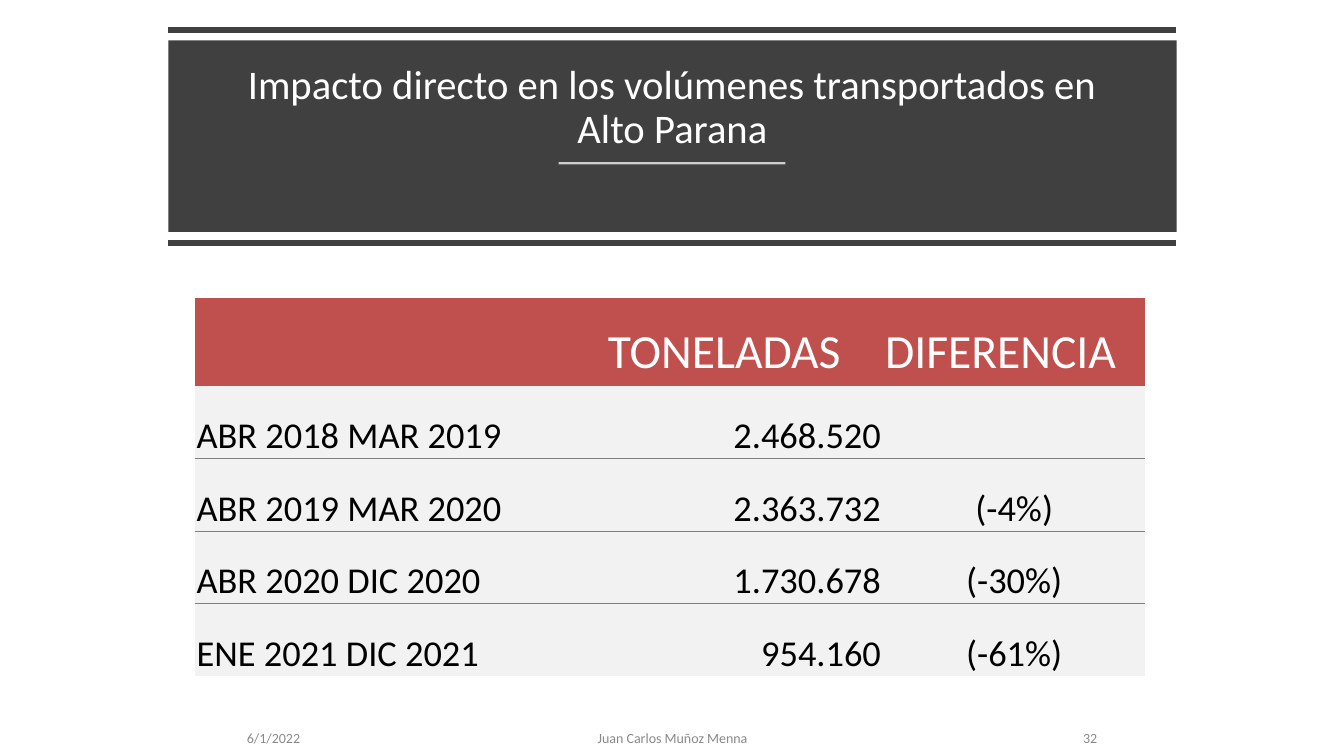
from dataclasses import dataclass

from lxml import etree
from pptx import Presentation
from pptx.dml.color import RGBColor
from pptx.enum import shapes, text
from pptx.oxml import ns, parse_xml
from pptx.util import Inches, Pt


@dataclass(frozen=True)
class Theme:
    font: str = "Calibri"
    dark: str = "404040"
    white: str = "FFFFFF"
    black: str = "000000"
    accent: str = "C0504D"
    row: str = "F2F2F2"
    rule: str = "808080"
    muted: str = "898989"
    title_size: int = 29
    header_size: int = 34
    row_size: int = 26
    footer_size: int = 10


LEFT, CENTER, RIGHT = (text.PP_ALIGN.LEFT, text.PP_ALIGN.CENTER,
                       text.PP_ALIGN.RIGHT)
PLAIN_TABLE = "{2D5ABB26-0587-4C30-8999-92F81FD0307C}"


class SlideBuilder:
    def __init__(self, slide, theme):
        self.slide = slide
        self.theme = theme

    def set_words(self, frame, words, size, color, align):
        """Fill a text frame with one formatted paragraph."""
        frame.text = words
        paragraph = frame.paragraphs[0]
        paragraph.alignment = align
        font = paragraph.runs[0].font
        font.name, font.size = self.theme.font, Pt(size)
        font.color.rgb = RGBColor.from_string(color)
        return paragraph

    def title(self, words, left, top, width, height):
        heading = self.slide.shapes.title
        heading.left, heading.top = Inches(left), Inches(top)
        heading.width, heading.height = Inches(width), Inches(height)
        frame = heading.text_frame
        frame.word_wrap = True
        frame.auto_size = text.MSO_AUTO_SIZE.NONE
        frame.vertical_anchor = text.MSO_ANCHOR.BOTTOM
        paragraph = self.set_words(frame, words, self.theme.title_size,
                                   self.theme.white, CENTER)
        paragraph.line_spacing = 0.9

    def band(self, left, top, width, height):
        """Draw the dark block and send it behind the title."""
        block = self.slide.shapes.add_shape(
            shapes.MSO_SHAPE.RECTANGLE, Inches(left), Inches(top),
            Inches(width), Inches(height))
        block.shadow.inherit = False
        block.fill.solid()
        block.fill.fore_color.rgb = RGBColor.from_string(self.theme.dark)
        block.line.fill.background()
        heading = self.slide.shapes.title
        heading.element.addprevious(block.element)

    def rule(self, left, right, y, color, weight, opacity=100):
        line = self.slide.shapes.add_connector(
            shapes.MSO_CONNECTOR.STRAIGHT,
            Inches(left), Inches(y), Inches(right), Inches(y))
        line.line.width = Pt(weight)
        line.line.color.rgb = RGBColor.from_string(color)
        properties = line.element.spPr
        etree.SubElement(properties, ns.qn("a:effectLst"))
        if opacity < 100:
            tone = properties.find(".//" + ns.qn("a:srgbClr"))
            etree.SubElement(tone, ns.qn("a:alpha"), val=str(opacity * 1000))

    def footer(self, words, left, width, align):
        note = self.slide.shapes.add_textbox(
            Inches(left), Inches(7.13), Inches(width), Inches(0.38))
        frame = note.text_frame
        frame.word_wrap = True
        frame.vertical_anchor = text.MSO_ANCHOR.MIDDLE
        paragraph = self.set_words(frame, words, self.theme.footer_size,
                                   self.theme.muted, align)
        paragraph.space_after = Pt(6)

    def border(self, cell, side):
        cell._tc.get_or_add_tcPr().insert(0, parse_xml(
            f'<a:{side} {ns.nsdecls("a")} w="9525"><a:solidFill>'
            f'<a:srgbClr val="{self.theme.rule}"/></a:solidFill></a:{side}>'))

    def cell(self, cell, words, is_header, align):
        theme = self.theme
        cell.fill.solid()
        cell.fill.fore_color.rgb = RGBColor.from_string(
            theme.accent if is_header else theme.row)
        cell.margin_left = cell.margin_right = Inches(0.02)
        cell.margin_top, cell.margin_bottom = Inches(0.21), 0
        if is_header:
            cell.vertical_anchor = text.MSO_ANCHOR.MIDDLE
            size, color = theme.header_size, theme.white
        else:
            cell.vertical_anchor = text.MSO_ANCHOR.BOTTOM
            size, color = theme.row_size, theme.black
        if words:
            self.set_words(cell.text_frame, words, size, color, align)

    def table(self, rows, left, top, widths, heights):
        grid = self.slide.shapes.add_table(
            len(rows), len(widths), Inches(left), Inches(top),
            Inches(sum(widths)), Inches(sum(heights))).table
        grid.first_row = grid.horz_banding = False
        grid._tbl.tblPr.find(ns.qn("a:tableStyleId")).text = PLAIN_TABLE
        for column, width in zip(grid.columns, widths):
            column.width = Inches(width)
        for row, height in zip(grid.rows, heights):
            row.height = Inches(height)
        aligns = (LEFT, LEFT, LEFT, RIGHT, CENTER)
        last = len(rows) - 1
        for r, values in enumerate(rows):
            for c, words in enumerate(values):
                cell = grid.cell(r, c)
                self.cell(cell, words, r == 0, LEFT if r == 0 else aligns[c])
                if 0 < r < last:
                    self.border(cell, "lnB")
                if r > 1:
                    self.border(cell, "lnT")


def main():
    deck = Presentation()
    deck.slide_width, deck.slide_height = Inches(13.33), Inches(7.5)
    theme = Theme()
    page = SlideBuilder(deck.slides.add_slide(deck.slide_layouts[5]), theme)

    page.band(1.67, 0.4, 10, 1.9)
    page.title("Impacto directo en los volúmenes transportados en Alto Parana",
               2.1, 0.54, 9.14, 1.02)
    for y in (0.3, 2.41):
        page.rule(1.67, 11.66, y, theme.dark, 4)
    page.rule(5.54, 7.79, 1.62, theme.white, 1.5, opacity=75)

    volumes = [
        ("", "TONELADAS", "DIFERENCIA"),
        ("ABR 2018 MAR 2019", "2.468.520", ""),
        ("ABR 2019 MAR 2020", "2.363.732", "(-4%)"),
        ("ABR 2020 DIC 2020", "1.730.678", "(-30%)"),
        ("ENE 2021 DIC 2021", "954.160", "(-61%)"),
    ]
    page.table([(period, "", "", tons, change)
                for period, tons, change in volumes],
               1.93, 2.96, (3.26, 0.41, 0.41, 2.75, 2.6), [0.87] + [0.72] * 4)

    page.footer("6/1/2022", 2.35, 2.25, LEFT)
    page.footer("Juan Carlos Muñoz Menna", 4.98, 3.38, CENTER)
    page.footer("32", 8.73, 2.25, RIGHT)
    deck.save("out.pptx")


if __name__ == "__main__":
    main()
